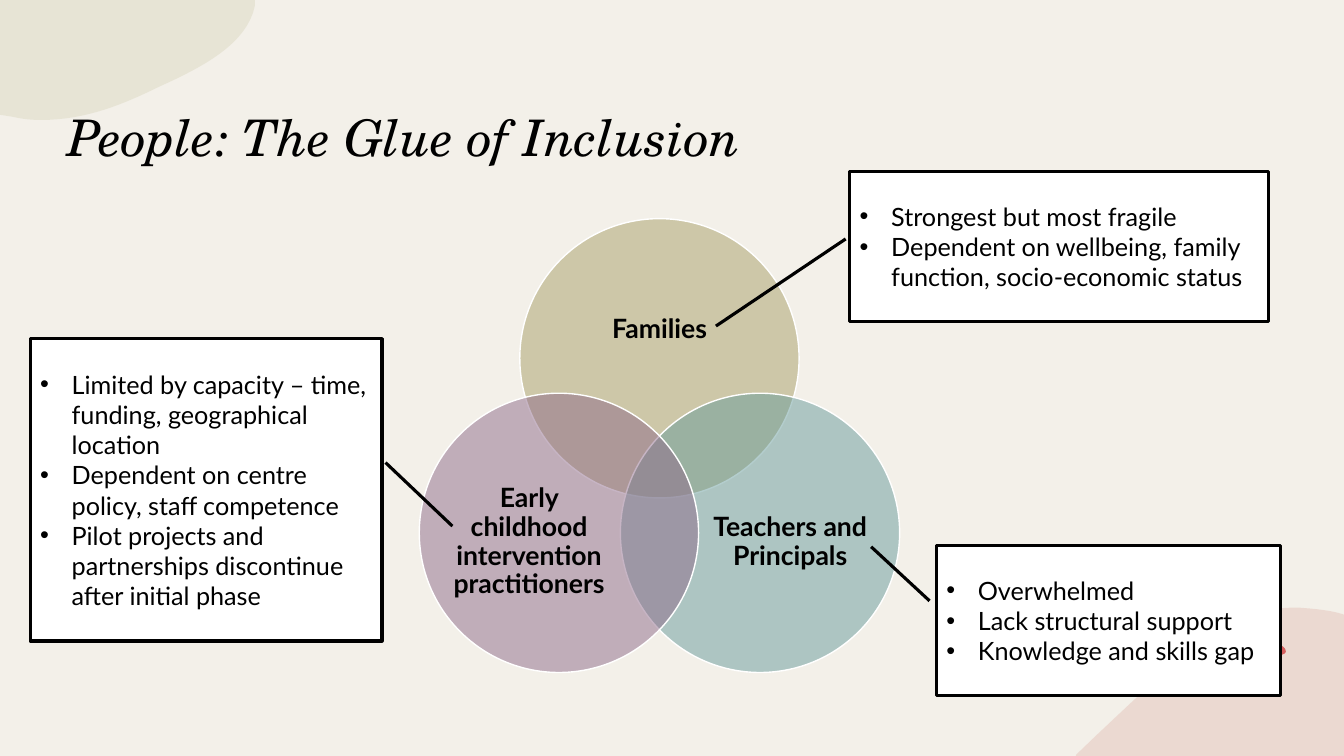
from lxml.etree import SubElement
from pptx import Presentation
from pptx.dml.color import RGBColor as RGB
from pptx.enum.shapes import MSO_SHAPE as SHAPE
from pptx.enum.text import MSO_ANCHOR as ANCHOR, PP_ALIGN as ALIGN
from pptx.oxml.ns import qn
from pptx.util import Pt

COLORS = {
    "paper": "F3F0E9", "ink": "000000", "white": "FFFFFF",
    "pink": "E5C4BA", "sand": "DCD9C3", "red": "D45E5E",
    "olive": "A89F68", "teal": "699C9C", "plum": "8F6B8A",
}
STEPS = 16

# Each segment holds one point for a line or three for a Bezier curve.
SAND = [(0, 0), [(182, 0)], [(182, 4.3)],
        [(176.4, 31.7), (144, 48.2), (113.8, 61.9)],
        [(88.6, 74.2), (61.9, 85.7), (29.5, 85.7)],
        [(22.3, 85.7), (15.8, 85), (9.4, 83.5)], [(0, 82)]]
PINK = [(159.1, 0), [(168.5, 0.7), (177.8, 1.4), (187.2, 3.6)],
        [(192, 5)], [(192, 108)], [(0, 108)], [(0.7, 105.1)],
        [(25.2, 81.4), (50.4, 58.3), (73.4, 36.7)],
        [(89.3, 20.9), (105.8, 11.5), (122.4, 5.8)],
        [(134.6, 1.4), (146.9, 0), (159.1, 0)]]
DOT = [(5.8, 0), [(7.2, 0), (9.4, 1.4), (10.1, 2.9)],
       [(10.8, 4.3), (10.8, 5.8), (8.6, 6.5)],
       [(6.5, 7.9), (0.7, 7.9), (0, 5.8)],
       [(-0.7, 4.3), (0, 2.9), (0.7, 2.2)],
       [(2.2, 0.7), (3.6, 0), (5.8, 0)]]


def paint(shape, color, alpha=100):
    """Fill a shape, with an opacity in percent, and drop its shadow."""
    shape.shadow.inherit = False
    shape.fill.solid()
    shape.fill.fore_color.rgb = RGB.from_string(COLORS[color])
    if alpha < 100:
        tone = shape._element.spPr.find(".//" + qn("a:srgbClr"))
        SubElement(tone, qn("a:alpha"), val=str(alpha * 1000))


def edge(shape, color, width):
    """Outline a shape."""
    shape.line.color.rgb = RGB.from_string(COLORS[color])
    shape.line.width = Pt(width)


def style(para, font, size, bold=False, italic=False):
    """Format every run of a paragraph."""
    for run in para.runs:
        run.font.name, run.font.size = font, Pt(size)
        run.font.bold, run.font.italic = bold, italic
        run.font.color.rgb = RGB.from_string(COLORS["ink"])


def trace(nodes):
    """Turn a start point and its segments into a list of points."""
    points = [nodes[0]]
    for seg in nodes[1:]:
        if len(seg) == 1:
            points += seg
            continue
        curve = [points[-1], *seg]
        for step in range(1, STEPS + 1):
            t = step / STEPS
            parts = ((1 - t) ** 3, 3 * t * (1 - t) ** 2, 3 * t * t * (1 - t), t ** 3)
            points.append(tuple(sum(w * p[axis] for w, p in zip(parts, curve))
                                for axis in (0, 1)))
    return points


def blob(slide, left, top, nodes, color, alpha=100):
    """Draw a soft outline from its top left corner."""
    first, *rest = [(Pt(left + x), Pt(top + y)) for x, y in trace(nodes)]
    form = slide.shapes.build_freeform(*first)
    form.add_line_segments(rest, close=True)
    shape = form.convert_to_shape()
    paint(shape, color, alpha)
    shape.line.fill.background()


def title(slide, left, top, width, height, text):
    """Place the slide heading."""
    frame = slide.shapes.add_textbox(Pt(left), Pt(top), Pt(width), Pt(height)).text_frame
    frame.word_wrap = True
    frame.vertical_anchor = ANCHOR.BOTTOM
    frame.text = text
    style(frame.paragraphs[0], "TeX Gyre Schola", 36, italic=True)


def label(slide, left, top, width, height, text):
    """Place a bold centred name on a circle."""
    frame = slide.shapes.add_textbox(Pt(left), Pt(top), Pt(width), Pt(height)).text_frame
    frame.word_wrap = True
    frame.vertical_anchor = ANCHOR.MIDDLE
    frame.margin_left = frame.margin_right = frame.margin_top = frame.margin_bottom = 0
    frame.text = text
    para = frame.paragraphs[0]
    para.alignment, para.line_spacing = ALIGN.CENTER, 0.9
    style(para, "Lato", 19, bold=True)


def venn(slide, left, top, size):
    """Draw three overlapping circles with their names."""
    shift, drop = size * 0.36, size * 0.625
    rings = [
        (1, 0, "olive", (98.6, 34.6, 146.2, 90), "Families"),
        (2, 1, "teal", (205.2, 176.4, 119.5, 109.4), "Teachers and Principals"),
        (0, 1, "plum", (18.7, 176.4, 119.5, 109.4),
         "Early childhood intervention practitioners"),
    ]
    for col, row, color, (x, y, width, height), text in rings:
        ring = slide.shapes.add_shape(SHAPE.OVAL, Pt(left + col * shift),
                                      Pt(top + row * drop), Pt(size), Pt(size))
        paint(ring, color, 50)
        edge(ring, "white", 1)
        label(slide, left + x, top + y, width, height, text)


def note(slide, left, top, width, height, tail, lines):
    """Draw a bulleted callout with its pointer line."""
    box = slide.shapes.add_shape(SHAPE.LINE_CALLOUT_1, Pt(left), Pt(top),
                                 Pt(width), Pt(height))
    for index, value in enumerate(tail):
        box.adjustments[index] = value
    paint(box, "white")
    edge(box, "ink", 2.25)
    frame = box.text_frame
    frame.word_wrap = True
    frame.vertical_anchor = ANCHOR.MIDDLE
    frame.text = "\n".join(lines)
    for para in frame.paragraphs:
        props = para._p.get_or_add_pPr()
        props.set("marL", str(Pt(22.5)))
        props.set("indent", str(-Pt(22.5)))
        SubElement(props, qn("a:buFont"), typeface="Arial")
        SubElement(props, qn("a:buChar"), char="•")
        para.alignment = ALIGN.LEFT
        style(para, "Lato", 18)


def main():
    """Build the slide and save it."""
    deck = Presentation()
    deck.slide_width, deck.slide_height = Pt(960), Pt(540)
    slide = deck.slides.add_slide(deck.slide_layouts[6])
    slide.background.fill.solid()
    slide.background.fill.fore_color.rgb = RGB.from_string(COLORS["paper"])
    blob(slide, 768, 434, PINK, "pink", 50)
    blob(slide, 907.9, 460.8, DOT, "red")
    blob(slide, 0, 0, SAND, "sand", 50)
    title(slide, 41, 28.8, 793.4, 93.6, "People: The Glue of Inclusion")
    venn(slide, 299.5, 156.2, 199.5)
    note(slide, 607, 122.4, 298.8, 107.3, (0.45, -0.01, 1.03, -0.32), [
        "Strongest but most fragile",
        "Dependent on wellbeing, family function, socio-economic status"])
    note(slide, 21.6, 241.9, 251.3, 216, (0.41, 1.01, 0.62, 1.2), [
        "Limited by capacity – time, funding, geographical location",
        "Dependent on centre policy, staff competence",
        "Pilot projects and partnerships discontinue after initial phase"])
    note(slide, 668.9, 389.5, 245.5, 107.3, (0.37, -0.02, 0.01, -0.19), [
        "Overwhelmed", "Lack structural support", "Knowledge and skills gap"])
    deck.save("out.pptx")


if __name__ == "__main__":
    main()
